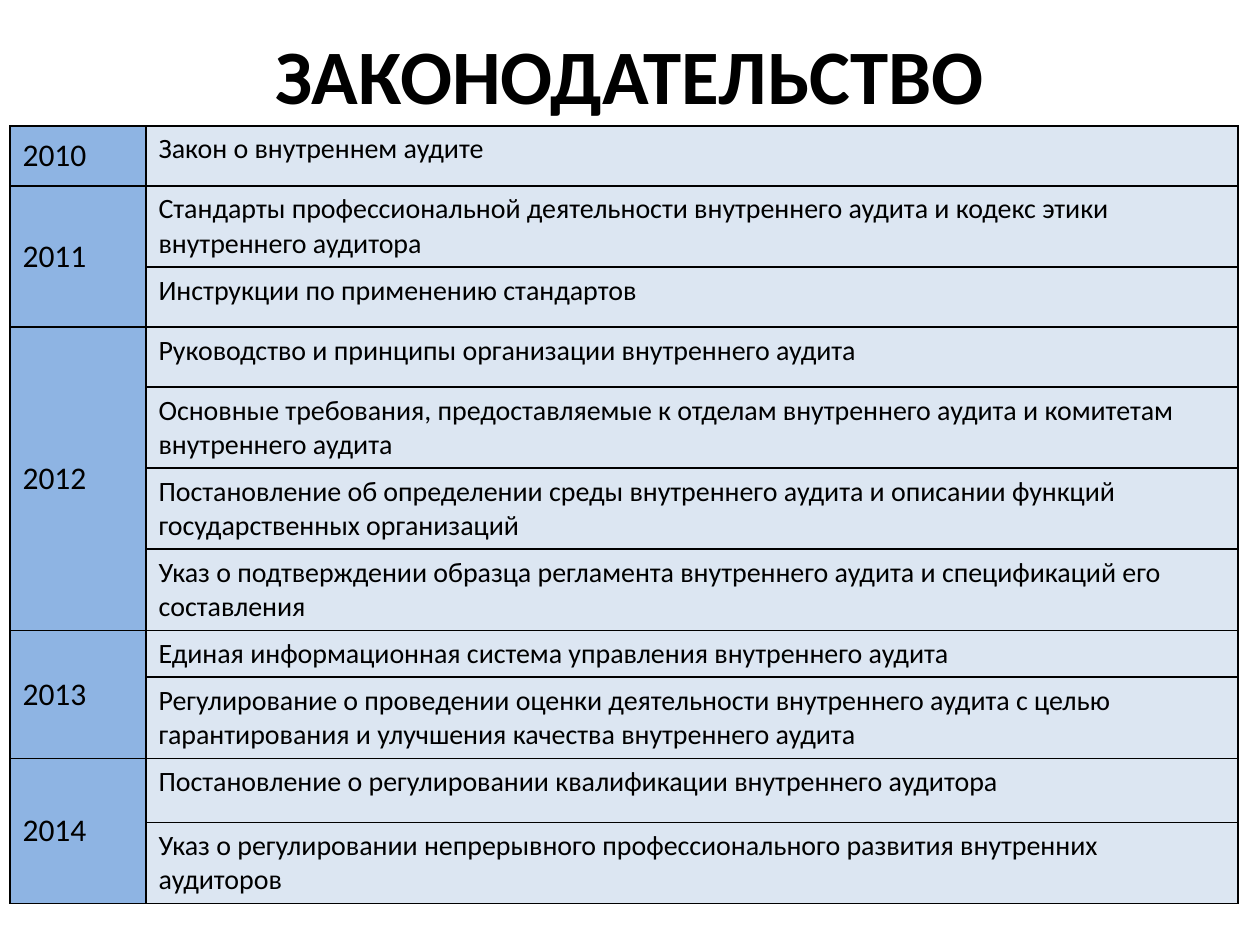
from dataclasses import dataclass

from lxml import etree
from pptx import Presentation
from pptx.dml.color import RGBColor
from pptx.enum.text import MSO_ANCHOR, PP_ALIGN
from pptx.oxml.ns import qn
from pptx.util import Pt

MIDDLE, TOP = MSO_ANCHOR.MIDDLE, MSO_ANCHOR.TOP
CENTER = PP_ALIGN.CENTER
PX = 914400 // 126


@dataclass(frozen=True)
class Theme:
    font: str = "Calibri"
    text: str = "000000"
    border: str = "000000"
    year_fill: str = "8EB4E3"
    law_fill: str = "DCE6F2"
    title_size: int = 44
    year_size: int = 18
    law_size: int = 16


THEME = Theme()

# Year, then its laws with their row heights in px
LAWS = [
    ("2010", [("Закон о внутреннем аудите", 60)]),
    ("2011", [
        ("Стандарты профессиональной деятельности внутреннего аудита и кодекс этики внутреннего аудитора", 60),
        ("Инструкции по применению стандартов", 60),
    ]),
    ("2012", [
        ("Руководство и принципы организации внутреннего аудита", 60),
        ("Основные требования, предоставляемые к отделам внутреннего аудита и комитетам внутреннего аудита", 60),
        ("Постановление об определении среды внутреннего аудита и описании функций государственных организаций", 60),
        ("Указ о подтверждении образца регламента внутреннего аудита и спецификаций его составления", 60),
    ]),
    ("2013", [
        ("Единая информационная система управления внутреннего аудита", 40),
        ("Регулирование о проведении оценки деятельности внутреннего аудита с целью "
         "гарантирования и улучшения качества внутреннего аудита", 73),
    ]),
    ("2014", [
        ("Постановление о регулировании квалификации внутреннего аудитора", 64),
        ("Указ о регулировании непрерывного профессионального развития внутренних аудиторов", 63),
    ]),
]


def set_font(p, size, bold=False):
    p.font.name = THEME.font
    p.font.size = Pt(size)
    p.font.bold = bold
    p.font.color.rgb = RGBColor.from_string(THEME.text)


def style_cell(cell, fill, size, anchor):
    """Draw the borders first, since the schema puts them before the fill."""
    tc_pr = cell._tc.get_or_add_tcPr()
    for side in ("a:lnL", "a:lnR", "a:lnT", "a:lnB"):
        ln = etree.SubElement(tc_pr, qn(side), w=str(Pt(1)))
        solid = etree.SubElement(ln, qn("a:solidFill"))
        etree.SubElement(solid, qn("a:srgbClr"), val=THEME.border)
    cell.fill.solid()
    cell.fill.fore_color.rgb = RGBColor.from_string(fill)
    cell.vertical_anchor = anchor
    set_font(cell.text_frame.paragraphs[0], size)


prs = Presentation()
prs.slide_width, prs.slide_height = 1260 * PX, 945 * PX
s = prs.slides.add_slide(prs.slide_layouts[5])

title = s.shapes.title
title.left, title.top, title.width, title.height = 63 * PX, 21 * PX, 1134 * PX, 105 * PX
tf = title.text_frame
tf.text = "ЗАКОНОДАТЕЛЬСТВО"
tf.vertical_anchor = MIDDLE
p = tf.paragraphs[0]
p.alignment = CENTER
set_font(p, THEME.title_size, bold=True)

row_count = sum(len(laws) for _, laws in LAWS)
frame = s.shapes.add_table(row_count, 2, 10 * PX, 126 * PX, 1228 * PX, 770 * PX)
table = frame.table
table.columns[0].width, table.columns[1].width = 136 * PX, 1092 * PX

row = 0
for year, laws in LAWS:
    first = row
    table.cell(first, 0).text = year
    for law, height in laws:
        table.rows[row].height = height * PX
        table.cell(row, 1).text = law
        style_cell(table.cell(row, 0), THEME.year_fill, THEME.year_size, MIDDLE)
        style_cell(table.cell(row, 1), THEME.law_fill, THEME.law_size, TOP)
        row += 1
    if len(laws) > 1:
        table.cell(first, 0).merge(table.cell(row - 1, 0))
frame.height = 770 * PX

prs.save("out.pptx")
